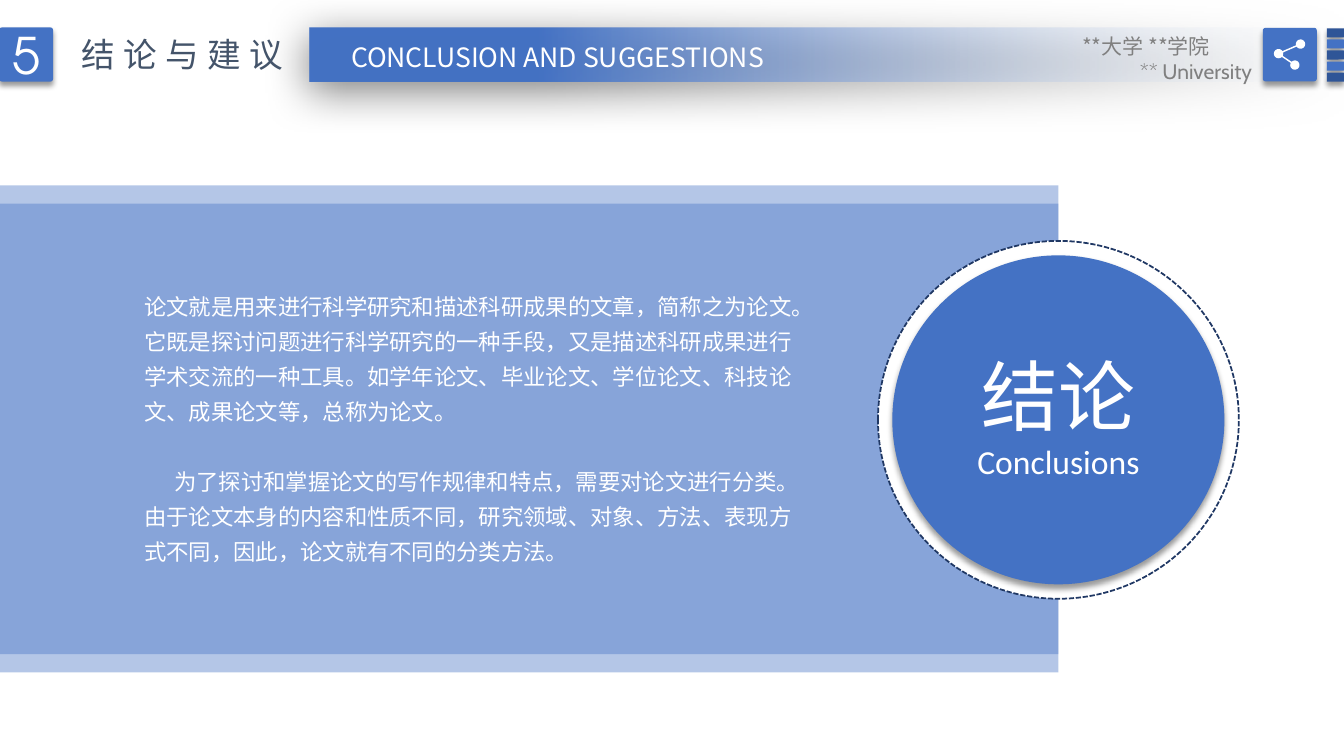
from math import cos, radians, sin

from lxml import etree
from pptx import Presentation
from pptx.dml.color import RGBColor
from pptx.enum.dml import MSO_LINE
from pptx.enum.shapes import MSO_SHAPE
from pptx.enum.text import MSO_ANCHOR, MSO_AUTO_SIZE, PP_ALIGN
from pptx.oxml.ns import qn
from pptx.util import Pt

RECT, ROUNDED, OVAL = MSO_SHAPE.RECTANGLE, MSO_SHAPE.ROUNDED_RECTANGLE, MSO_SHAPE.OVAL
TOP, MIDDLE = MSO_ANCHOR.TOP, MSO_ANCHOR.MIDDLE
LEFT, CENTER, RIGHT = PP_ALIGN.LEFT, PP_ALIGN.CENTER, PP_ALIGN.RIGHT
NO_FIT = MSO_AUTO_SIZE.NONE
DASHED = MSO_LINE.SQUARE_DOT

COLORS = {
    "blue": "4472C4", "deep": "2F5597", "navy": "203864", "mist": "F7FAFD",
    "white": "FFFFFF", "slate": "44546A", "grey": "808080", "black": "000000",
}
CJK = "Noto Sans CJK SC"
# opacity in percent, blur, distance, direction in degrees
SOFT_SHADOW = (40, 4, 3, 90)
WIDE_SHADOW = (50, 31, 6, 97)

DEFINITION = (
    "论文就是用来进行科学研究和描述科研成果的文章，简称之为论文。它既是探讨问题进行科学研究的一种手段，"
    "又是描述科研成果进行学术交流的一种工具。如学年论文、毕业论文、学位论文、科技论文、成果论文等，总称为论文。"
)
CLASSIFICATION = (
    "为了探讨和掌握论文的写作规律和特点，需要对论文进行分类。由于论文本身的内容和性质不同，"
    "研究领域、对象、方法、表现方式不同，因此，论文就有不同的分类方法。"
)


def rgb(color):
    return RGBColor.from_string(COLORS[color])


def set_alpha(color_element, percent):
    etree.SubElement(color_element, qn("a:alpha")).set("val", str(percent * 1000))


def place(shape, box):
    for side, length in zip(("left", "top", "width", "height"), box):
        setattr(shape, side, Pt(length))


def add_block(slide, preset, box, color, opacity=None, shadow=None):
    """Add a borderless filled shape, optionally see-through or with a shadow."""
    block = slide.shapes.add_shape(preset, *map(Pt, box))
    if preset == ROUNDED:
        block.adjustments[0] = 0.05
    block.fill.solid()
    block.fill.fore_color.rgb = rgb(color)
    block.line.fill.background()
    block.shadow.inherit = False
    properties = block._element.spPr
    if opacity:
        set_alpha(properties.find(".//" + qn("a:srgbClr")), opacity)
    if shadow:
        strength, blur, distance, direction = shadow
        outer = etree.SubElement(properties.find(qn("a:effectLst")), qn("a:outerShdw"))
        values = {"blurRad": Pt(blur), "dist": Pt(distance),
                  "dir": direction * 60000, "algn": "t", "rotWithShape": 0}
        for key, value in values.items():
            outer.set(key, str(int(value) if key != "algn" else value))
        shade = etree.SubElement(outer, qn("a:srgbClr"))
        shade.set("val", COLORS["black"])
        set_alpha(shade, strength)
    return block


def format_frame(frame, anchor=TOP, wrap=True, inset=(7.2, 3.6)):
    across, down = inset
    values = {
        "auto_size": NO_FIT, "word_wrap": wrap, "vertical_anchor": anchor,
        "margin_left": Pt(across), "margin_right": Pt(across),
        "margin_top": Pt(down), "margin_bottom": Pt(down),
    }
    for key, value in values.items():
        setattr(frame, key, value)


def write(paragraph, text, size, color, font=CJK, tracking=None, margin=0, indent=0, **layout):
    """Fill a paragraph with one run; layout holds further paragraph attributes."""
    properties = paragraph._p.get_or_add_pPr()
    properties.set("marL", str(Pt(margin)))
    properties.set("indent", str(Pt(indent)))
    for key, value in {"space_before": Pt(0), **layout}.items():
        setattr(paragraph, key, value)
    etree.SubElement(properties, qn("a:buNone"))
    run = paragraph.add_run()
    run.text = text
    for key, value in {"size": Pt(size), "name": font, "bold": False}.items():
        setattr(run.font, key, value)
    run.font.color.rgb = rgb(color)
    run_properties = run._r.get_or_add_rPr()
    etree.SubElement(run_properties, qn("a:ea")).set("typeface", font)
    if tracking:
        run_properties.set("spc", str(tracking * 100))


def add_text_box(slide, box, **frame_format):
    frame = slide.shapes.add_textbox(*map(Pt, box)).text_frame
    format_frame(frame, **frame_format)
    return frame


def move_to_front(slide, placeholder):
    slide.shapes._spTree.append(placeholder._element)


def add_body_panel(slide, box):
    left, top, width, height = box
    offset = 13
    for band_top in (top + offset, top):
        add_block(slide, RECT, (left, band_top, width, height), "blue", opacity=40)
    body = slide.placeholders[1]
    move_to_front(slide, body)
    place(body, (left + 95.8, top + 67.7, 480.2, 208.8))
    frame = body.text_frame
    format_frame(frame)
    write(frame.paragraphs[0], DEFINITION, 16, "white", alignment=LEFT, line_spacing=1.3)
    write(frame.add_paragraph(), CLASSIFICATION, 16, "white", indent=21.5,
          alignment=LEFT, line_spacing=1.3, space_before=Pt(25))


def add_conclusion_badge(slide, box):
    left, top, width, height = box
    ring = add_block(slide, OVAL, box, "white")
    ring.line.color.rgb = rgb("navy")
    ring.line.width = Pt(1.25)
    ring.line.dash_style = DASHED
    gap = 10.3
    add_block(slide, OVAL, (left + gap, top + gap, width - 2 * gap, height - 2 * gap),
              "blue", shadow=SOFT_SHADOW)
    frame = add_text_box(slide, (left + 55.5, top + 77, width - 111, 105), inset=(0, 0))
    write(frame.paragraphs[0], "结论", 55, "white", alignment=CENTER)
    write(frame.add_paragraph(), "Conclusions", 24, "white", font="Calibri", alignment=CENTER)


def add_share_icon(slide, box):
    """Draw three linked dots as one outline, walking around each dot in turn."""
    left, top, width, height = box
    radius = 3.3
    hub = (left + radius, top + 0.47 * height)
    upper = (left + width - radius, top + radius)
    lower = (left + 0.67 * width, top + height - radius)
    arcs = [(hub, -33, -315), (lower, 207, -135), (hub, 27, -15), (upper, 147, -195)]
    steps = 24
    points = []
    for (x, y), start, end in arcs:
        for step in range(steps + 1):
            angle = radians(start + (end - start) * step / steps)
            points.append((Pt(x + radius * cos(angle)), Pt(y + radius * sin(angle))))
    builder = slide.shapes.build_freeform(*points[0])
    builder.add_line_segments(points[1:], close=True)
    icon = builder.convert_to_shape()
    icon.fill.solid()
    icon.fill.fore_color.rgb = rgb("white")
    icon.line.fill.background()
    icon.shadow.inherit = False


def add_header(slide, box):
    left, top, width, height = box
    banner_left = left + 221
    banner = add_block(slide, RECT, (banner_left, top + 0.3, width - 221, height - 0.3),
                       "blue", shadow=WIDE_SHADOW)
    banner.fill.gradient()
    banner.fill.gradient_angle = 180
    for stop, color, position in zip(banner.fill.gradient_stops, ("mist", "blue"), (0, 0.78)):
        stop.color.rgb = rgb(color)
        stop.position = position
    set_alpha(banner._element.spPr.find(".//" + qn("a:gs")).find(qn("a:srgbClr")), 0)

    number = add_block(slide, ROUNDED, (left - 0.5, top, 38.4, height), "blue",
                       shadow=SOFT_SHADOW).text_frame
    format_frame(number, anchor=MIDDLE)
    write(number.paragraphs[0], "5", 36, "white", font="TeX Gyre Adventor", alignment=CENTER)

    title = slide.shapes.title
    move_to_front(slide, title)
    place(title, (left + 51, top + 1.3, 160, 36))
    format_frame(title.text_frame, wrap=False)
    write(title.text_frame.paragraphs[0], "结论与建议", 24, "slate", tracking=6, alignment=LEFT)

    subtitle = add_text_box(slide, (banner_left + 11, top + 6.3, 332.6, 30.2))
    write(subtitle.paragraphs[0], "CONCLUSION AND SUGGESTIONS", 19, "white", alignment=CENTER)

    stripe_pitch = 7.92
    for row in range(5):
        add_block(slide, ROUNDED, (left + 947.8, top + 0.6 + row * stripe_pitch, 12.2, 6.5),
                  ("deep", "blue")[row % 2], shadow=SOFT_SHADOW)
    add_block(slide, ROUNDED, (left + 902, top + 0.3, 38.6, 38.2), "blue", shadow=SOFT_SHADOW)
    add_share_icon(slide, (left + 910, top + 8.6, 22.3, 21.6))

    affiliation = add_text_box(slide, (left + 730.8, top + 0.7, 170.6, 45.4))
    write(affiliation.paragraphs[0], "**大学 **学院", 15, "grey", margin=35, alignment=LEFT)
    write(affiliation.add_paragraph(), "** University", 15, "grey", font="Cabin", alignment=RIGHT)


def main():
    deck = Presentation()
    deck.slide_width, deck.slide_height = Pt(960), Pt(540)
    slide = deck.slides.add_slide(deck.slide_layouts[1])
    add_body_panel(slide, (0, 132.5, 756, 334.8))
    add_conclusion_badge(slide, (627.1, 172.1, 257.8, 255.6))
    add_header(slide, (0, 19.6, 960, 38.7))
    deck.save("out.pptx")


if __name__ == "__main__":
    main()
